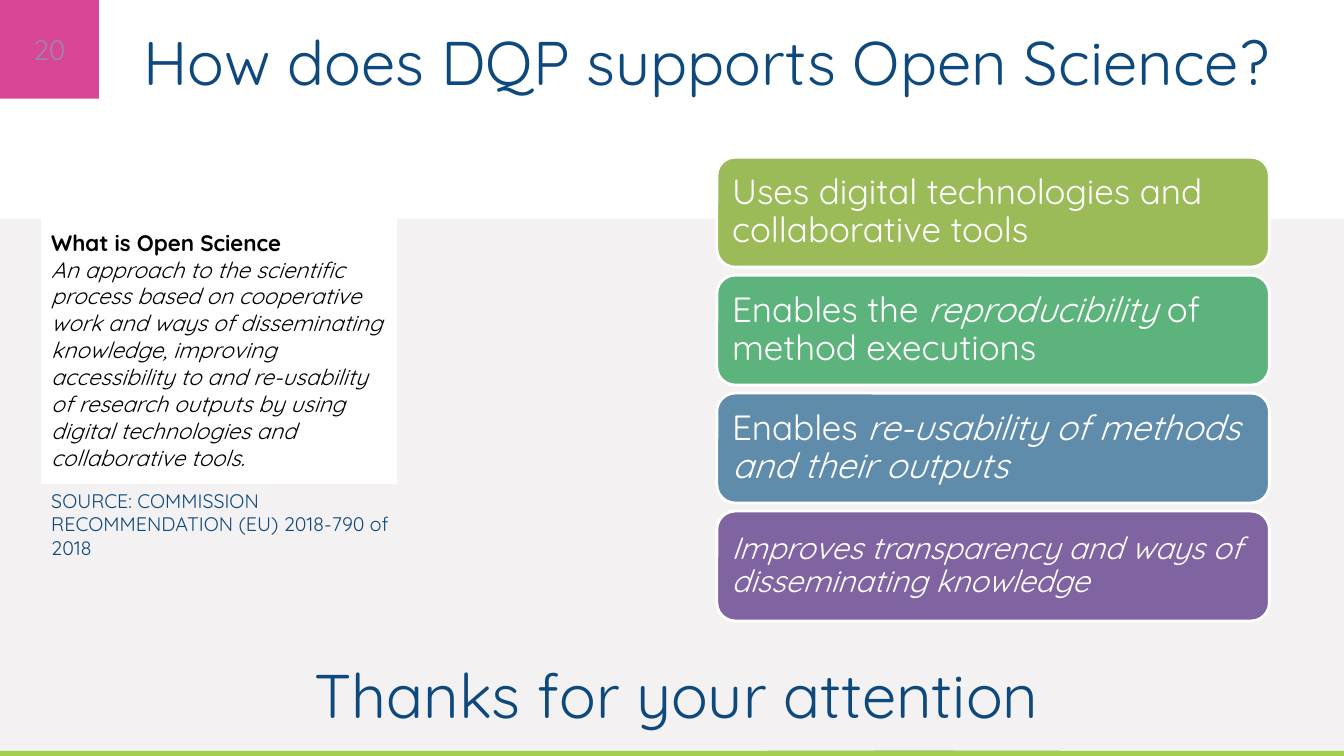
from pptx import Presentation
from pptx.dml.color import RGBColor
from pptx.enum.shapes import MSO_SHAPE
from pptx.enum.text import MSO_ANCHOR, PP_ALIGN
from pptx.util import Emu, Pt

PX = 9144  # 100 px to the inch
NAVY, WHITE, BLACK = "0E497D", "FFFFFF", "000000"


def block(kind, box, fill, line=None, width=1):
    """Add a filled shape, with an outline only if a line colour is given."""
    shape = slide.shapes.add_shape(kind, *[Emu(n * PX) for n in box])
    shape.shadow.inherit = False
    shape.fill.solid()
    shape.fill.fore_color.rgb = RGBColor.from_string(fill)
    if line:
        shape.line.color.rgb = RGBColor.from_string(line)
        shape.line.width = Pt(width)
    else:
        shape.line.fill.background()
    return shape


def write(shape, paragraphs, size, color, align=PP_ALIGN.LEFT,
          anchor=MSO_ANCHOR.MIDDLE, spacing=None):
    """Fill a shape with paragraphs, each a list of (text, font format) runs."""
    frame = shape.text_frame
    frame.word_wrap = True
    frame.vertical_anchor = anchor
    for i, runs in enumerate(paragraphs):
        paragraph = frame.paragraphs[0] if i == 0 else frame.add_paragraph()
        paragraph.alignment = align
        paragraph.line_spacing = spacing
        for text, extra in runs:
            run = paragraph.add_run()
            run.text = text
            run.font.color.rgb = RGBColor.from_string(color)
            font_format = {"name": "Quicksand", "size": Pt(size), **extra}
            for key, value in font_format.items():
                setattr(run.font, key, value)


presentation = Presentation()
presentation.slide_width = Emu(1333 * PX)
presentation.slide_height = Emu(750 * PX)
slide = presentation.slides.add_slide(presentation.slide_layouts[6])

PLAIN, BOLD, ITALIC = {}, {"bold": True}, {"italic": True}

# Grey lower area, page number square and green footer strips
block(MSO_SHAPE.RECTANGLE, (0, 217, 1336, 533), "F3F1F1")
page_number = block(MSO_SHAPE.RECTANGLE, (0, 0, 98, 98), "D94696")
write(page_number, [[("20", PLAIN)]], 20, "9A86B0", PP_ALIGN.CENTER)
for left, width, color in [(761, 185, "0C9400"), (866, 185, "055800"),
                           (0, 1336, "A1D04C")]:
    block(MSO_SHAPE.RECTANGLE, (left, 745, width, 7), color)

# Title and closing words
for text, box in [
    ("How does DQP supports Open Science?", (82, -2, 1238, 125)),
    ("Thanks for your attention ", (113, 614, 1133, 149)),
]:
    heading = slide.shapes.add_textbox(*[Emu(n * PX) for n in box])
    write(heading, [[(text, PLAIN)]], 44, NAVY, PP_ALIGN.CENTER)

# Four contributions: fill, font size, text margin, runs
contributions = [
    ("9BBB59", 25, 10,
     [("Uses digital technologies and collaborative tools", PLAIN)]),
    ("5CB37C", 25, 10,
     [("Enables the ", PLAIN), ("reproducibility", ITALIC),
      (" of method executions", PLAIN)]),
    ("608CAB", 25, 10,
     [("Enables ", PLAIN),
      ("re-usability of methods and their outputs", ITALIC)]),
    ("8064A2", 22, 9,
     [("Improves transparency and ways of disseminating knowledge", ITALIC)]),
]
CARD_TOP, CARD_STEP = 156, 117
for i, (fill, size, margin, runs) in enumerate(contributions):
    card = block(MSO_SHAPE.ROUNDED_RECTANGLE,
                 (711, CARD_TOP + i * CARD_STEP, 548, 109), fill, WHITE, 2)
    for side in ("left", "top", "right", "bottom"):
        setattr(card.text_frame, f"margin_{side}", Emu(margin * PX))
    write(card, [runs], size, WHITE, spacing=0.9)

# Definition of Open Science and its source
definition = block(MSO_SHAPE.RECTANGLE, (41, 214, 352, 266), WHITE, WHITE, 0.75)
write(definition, [
    [("What is Open Science", BOLD)],
    [("An approach to the scientific process based on cooperative work and "
      "ways of disseminating knowledge, improving accessibility to and "
      "re-usability of research outputs by using digital technologies and "
      "collaborative tools.", ITALIC)],
], 16, BLACK)
citation = slide.shapes.add_textbox(*[Emu(n * PX) for n in (41, 480, 389, 81)])
write(citation,
      [[("SOURCE: COMMISSION RECOMMENDATION (EU) 2018-790 of 2018", PLAIN)]],
      14, NAVY, anchor=MSO_ANCHOR.TOP)

presentation.save("out.pptx")
